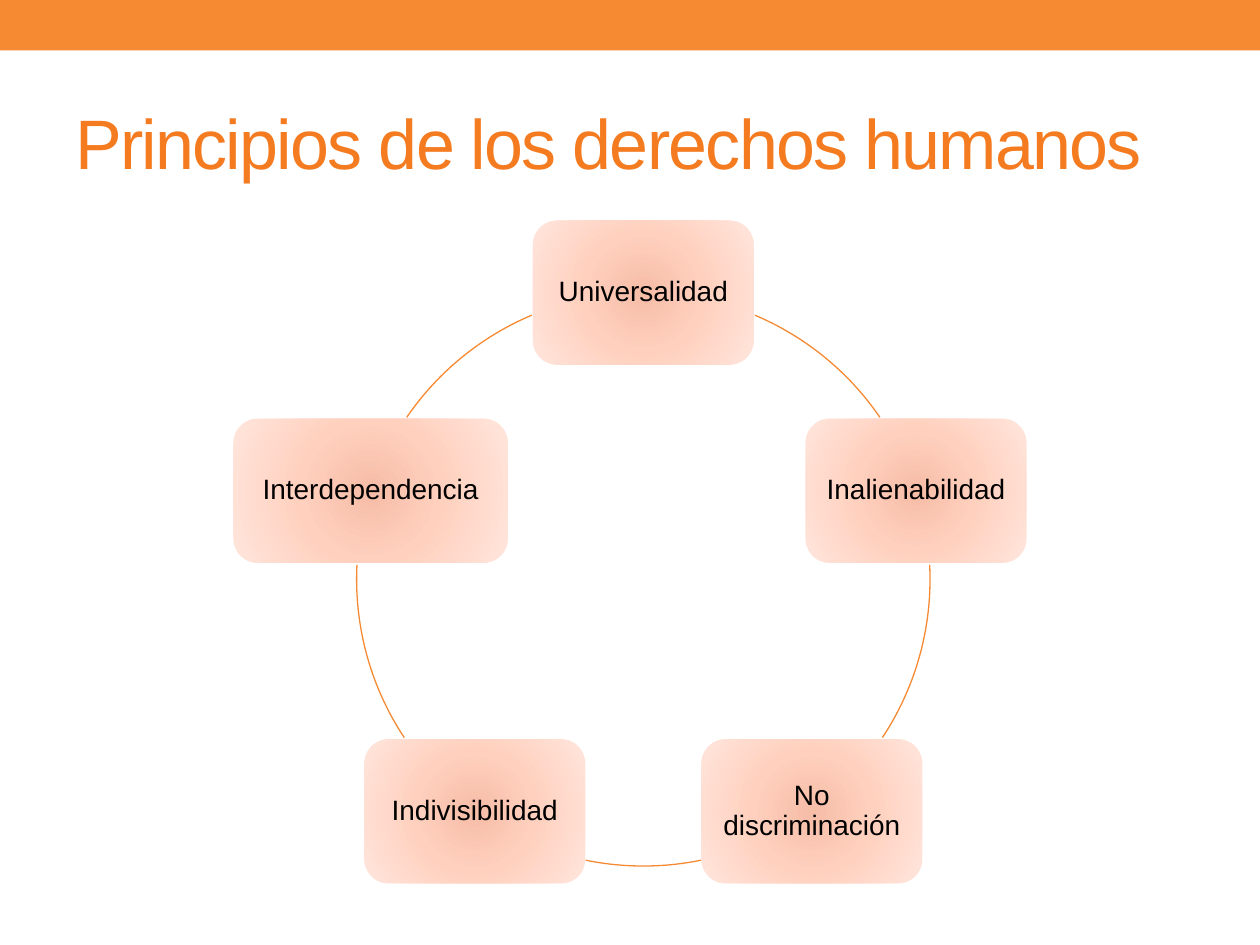
import math

import lxml.etree
import pptx
import pptx.dml.color
import pptx.enum.shapes
import pptx.enum.text
import pptx.oxml.ns
import pptx.util

Cm = pptx.util.Cm
SHAPES = pptx.enum.shapes.MSO_SHAPE
ALIGN = pptx.enum.text.PP_ALIGN

# Content: principles clockwise from the top, with box widths in cm
TITLE = "Principios de los derechos humanos"
PRINCIPLES = [
    ("Universalidad", 4.45),
    ("Inalienabilidad", 4.45),
    ("No discriminación", 4.45),
    ("Indivisibilidad", 4.45),
    ("Interdependencia", 5.53),
]
# Visible arcs between neighbouring boxes, in degrees clockwise from the right
ARCS = [(292.9, 325.6), (357.1, 33.5), (78.4, 101.6), (146.5, 182.9), (214.4, 247.1)]

THEME = {
    "font": "Arial",
    "accent": "F68A33",
    "title": {"size": 40, "color": "F47B20"},
    "label": {"size": 16, "color": "000000"},
    "box_stops": [(0, "F6BDA7"), (45, "FFD0BE"), (100, "FFE5DC")],
    "line_width": 0.75,
}

# Geometry in cm
CENTER_X, CENTER_Y, RADIUS = 12.97, 11.68, 5.78
BOX_HEIGHT = 2.9
BOX_MARGIN = 0.18


def rgb(value):
    return pptx.dml.color.RGBColor.from_string(value)


def add_shape(slide, kind, left, top, width, height):
    shape = slide.shapes.add_shape(kind, Cm(left), Cm(top), Cm(width), Cm(height))
    shape.shadow.inherit = False
    shape.line.fill.background()
    return shape


def fill_radial(shape, stops):
    shape.fill.gradient()
    gradient = shape._element.spPr.find(pptx.oxml.ns.qn("a:gradFill"))
    for child in list(gradient):
        gradient.remove(child)

    def add(parent, tag, **attributes):
        return lxml.etree.SubElement(parent, pptx.oxml.ns.qn(tag), **attributes)

    stop_list = add(gradient, "a:gsLst")
    for position, color in stops:
        stop = add(stop_list, "a:gs", pos=str(position * 1000))
        add(stop, "a:srgbClr", val=color)
    circle = add(gradient, "a:path", path="circle")
    add(circle, "a:fillToRect", **{side: "100000" for side in "ltrb"})


def write_text(shape, text, style, frame_format, paragraph_format):
    frame = shape.text_frame
    frame_values = {
        "word_wrap": True,
        "vertical_anchor": pptx.enum.text.MSO_ANCHOR.MIDDLE,
        **frame_format,
    }
    for name, value in frame_values.items():
        setattr(frame, name, value)
    paragraph = frame.paragraphs[0]
    for name, value in paragraph_format.items():
        setattr(paragraph, name, value)
    run = paragraph.add_run()
    run.text = text
    font_values = {"name": THEME["font"], "size": pptx.util.Pt(style["size"])}
    for name, value in font_values.items():
        setattr(run.font, name, value)
    run.font.color.rgb = rgb(style["color"])
    return run


def add_header(slide):
    band = add_shape(slide, SHAPES.RECTANGLE, 0, 0, 25.4, 1.02)
    band.fill.solid()
    band.fill.fore_color.rgb = rgb(THEME["accent"])

    title = slide.shapes.add_textbox(Cm(1.27), Cm(1.49), Cm(22.86), Cm(2.74))
    run = write_text(title, TITLE, THEME["title"], {}, {"alignment": ALIGN.LEFT})
    run.font._element.set("spc", "-100")


def add_box(slide, index, text, width):
    angle = math.radians(360 / len(PRINCIPLES) * index - 90)
    left = CENTER_X + RADIUS * math.cos(angle) - width / 2
    top = CENTER_Y + RADIUS * math.sin(angle) - BOX_HEIGHT / 2
    box = add_shape(slide, SHAPES.ROUNDED_RECTANGLE, left, top, width, BOX_HEIGHT)
    fill_radial(box, THEME["box_stops"])
    sides = ("left", "top", "right", "bottom")
    margins = {f"margin_{side}": Cm(BOX_MARGIN) for side in sides}
    paragraph_format = {"alignment": ALIGN.CENTER, "line_spacing": 0.9}
    write_text(box, text, THEME["label"], margins, paragraph_format)


def add_arc(slide, angles):
    arc = add_shape(slide, SHAPES.ARC, CENTER_X - RADIUS, CENTER_Y - RADIUS,
                    2 * RADIUS, 2 * RADIUS)
    arc.fill.background()
    arc.line.color.rgb = rgb(THEME["accent"])
    arc.line.width = pptx.util.Pt(THEME["line_width"])
    for position, degrees in enumerate(angles):
        arc.adjustments[position] = degrees * 0.6  # 60000 units a degree, scaled by 100000


def main():
    presentation = pptx.Presentation()
    presentation.slide_width, presentation.slide_height = Cm(25.4), Cm(19.05)
    slide = presentation.slides.add_slide(presentation.slide_layouts[6])

    add_header(slide)
    # Cycle: each box is followed by the arc to the next one
    for index, ((text, width), angles) in enumerate(zip(PRINCIPLES, ARCS)):
        add_box(slide, index, text, width)
        add_arc(slide, angles)

    presentation.save("out.pptx")


if __name__ == "__main__":
    main()
